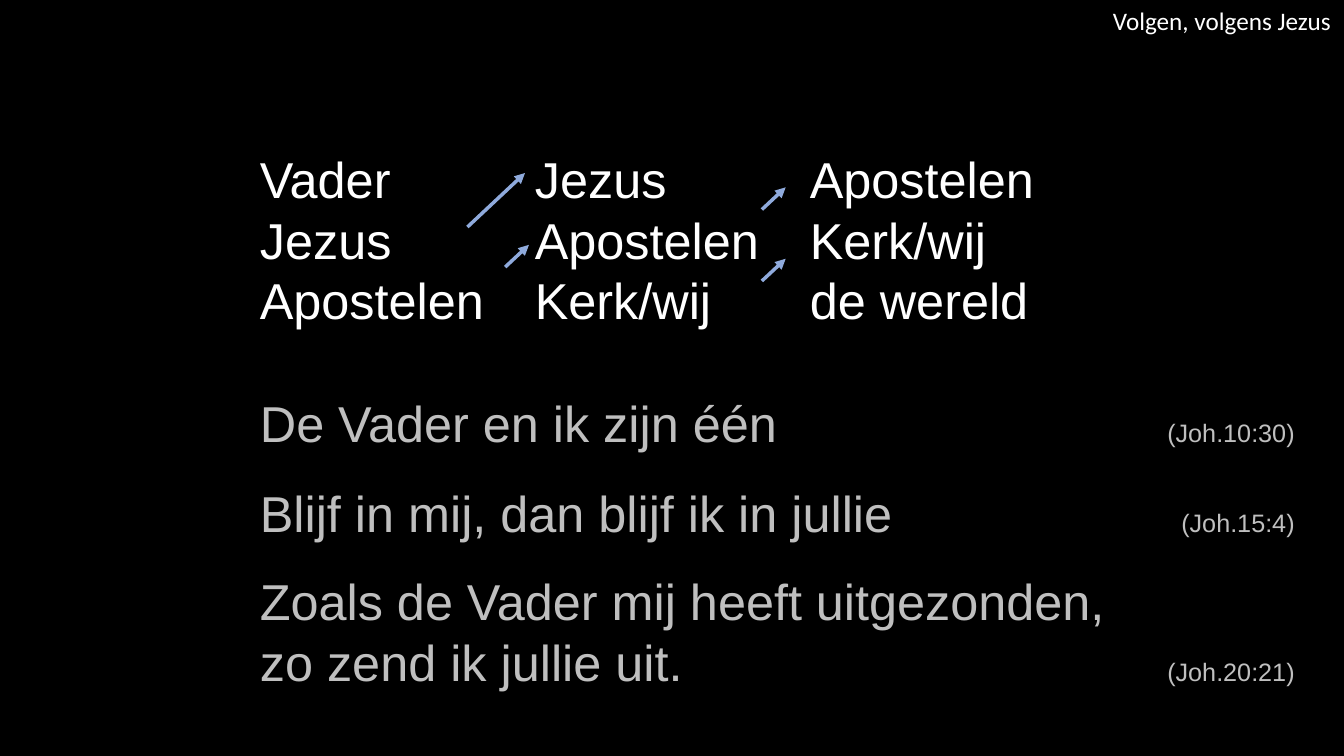
from lxml import etree
from pptx import Presentation
from pptx.dml.color import RGBColor
from pptx.enum import shapes, text
from pptx.oxml.ns import qn
from pptx.util import Cm, Pt

WHITE, GREY, BLUE = "FFFFFF", "BFBFBF", "8FAADC"
LEFT, STEP = 6.3, 6.93


def color(code):
    return RGBColor.from_string(code)


def write(para, words, size=36, font="Arial", fill=WHITE):
    """Add formatted text, with a line break at each newline."""
    for i, part in enumerate(words.split("\n")):
        if i:
            para.add_line_break()
        run = para.add_run()
        run.text = part
        run.font.size = Pt(size)
        run.font.name = font
        run.font.color.rgb = color(fill)


def place(shape, left, top, width, height):
    shape.left, shape.top = Cm(left), Cm(top)
    shape.width, shape.height = Cm(width), Cm(height)


def box(slide, *area):
    frame = slide.shapes.add_textbox(*map(Cm, area)).text_frame
    frame.word_wrap = True
    return frame


def lines(frame, items):
    """Yield each item with its own paragraph, using the first one present."""
    for i, item in enumerate(items):
        yield (frame.add_paragraph() if i else frame.paragraphs[0]), item


def title(slide, words):
    head = slide.shapes.title
    place(head, 27.79, 0, 6.43, 1.02)
    frame = head.text_frame
    frame.word_wrap = True
    frame.auto_size = text.MSO_AUTO_SIZE.NONE
    frame.vertical_anchor = text.MSO_ANCHOR.TOP
    para = frame.paragraphs[0]
    para.alignment = text.PP_ALIGN.LEFT
    write(para, words, size=18, font="Calibri")


def column(slide, left, names):
    for para, name in lines(box(slide, left, 3.61, STEP, 4.88), names):
        write(para, name)


def arrow(slide, *ends):
    line = slide.shapes.add_connector(
        shapes.MSO_CONNECTOR.STRAIGHT, *map(Cm, ends))
    line.line.color.rgb = color(BLUE)
    line.line.width = Pt(2.5)
    etree.SubElement(line.line._get_or_add_ln(), qn("a:tailEnd"),
                     type="triangle")
    etree.SubElement(line._element.spPr, qn("a:effectLst"))


def tab(para, spot):
    """Set a right-aligned tab stop."""
    stops = etree.SubElement(para._p.get_or_add_pPr(), qn("a:tabLst"))
    etree.SubElement(stops, qn("a:tab"), pos=str(Cm(spot)), algn="r")


def verses(slide, items):
    frame = box(slide, LEFT, 9.75, 27.15, 7.87)
    for para, (verse, source, gap) in lines(frame, items):
        para.space_before = Pt(gap)
        tab(para, 26.08)
        write(para, verse + "\t", fill=GREY)
        write(para, source, size=18, fill=GREY)


def main():
    deck = Presentation()
    deck.slide_width, deck.slide_height = Cm(33.87), Cm(19.05)
    slide = deck.slides.add_slide(deck.slide_layouts[5])
    slide.background.fill.solid()
    slide.background.fill.fore_color.rgb = color("000000")

    title(slide, "Volgen, volgens Jezus")
    chain = ["Vader", "Jezus", "Apostelen", "Kerk/wij", "de wereld"]
    for i in range(3):
        column(slide, LEFT + i * STEP, chain[i:i + 3])

    arrow(slide, 11.78, 5.72, 13.23, 4.36)
    for left, top in [(12.73, 6.73), (19.2, 7.08), (19.2, 5.28)]:
        arrow(slide, left, top, left + 0.6, top - 0.56)

    verses(slide, [
        ("De Vader en ik zijn één", "(Joh.10:30)", 0),
        ("Blijf in mij, dan blijf ik in jullie", "(Joh.15:4)", 21.5),
        ("Zoals de Vader mij heeft uitgezonden,\nzo zend ik jullie uit.",
         "(Joh.20:21)", 19.5),
    ])
    deck.save("out.pptx")


if __name__ == "__main__":
    main()
